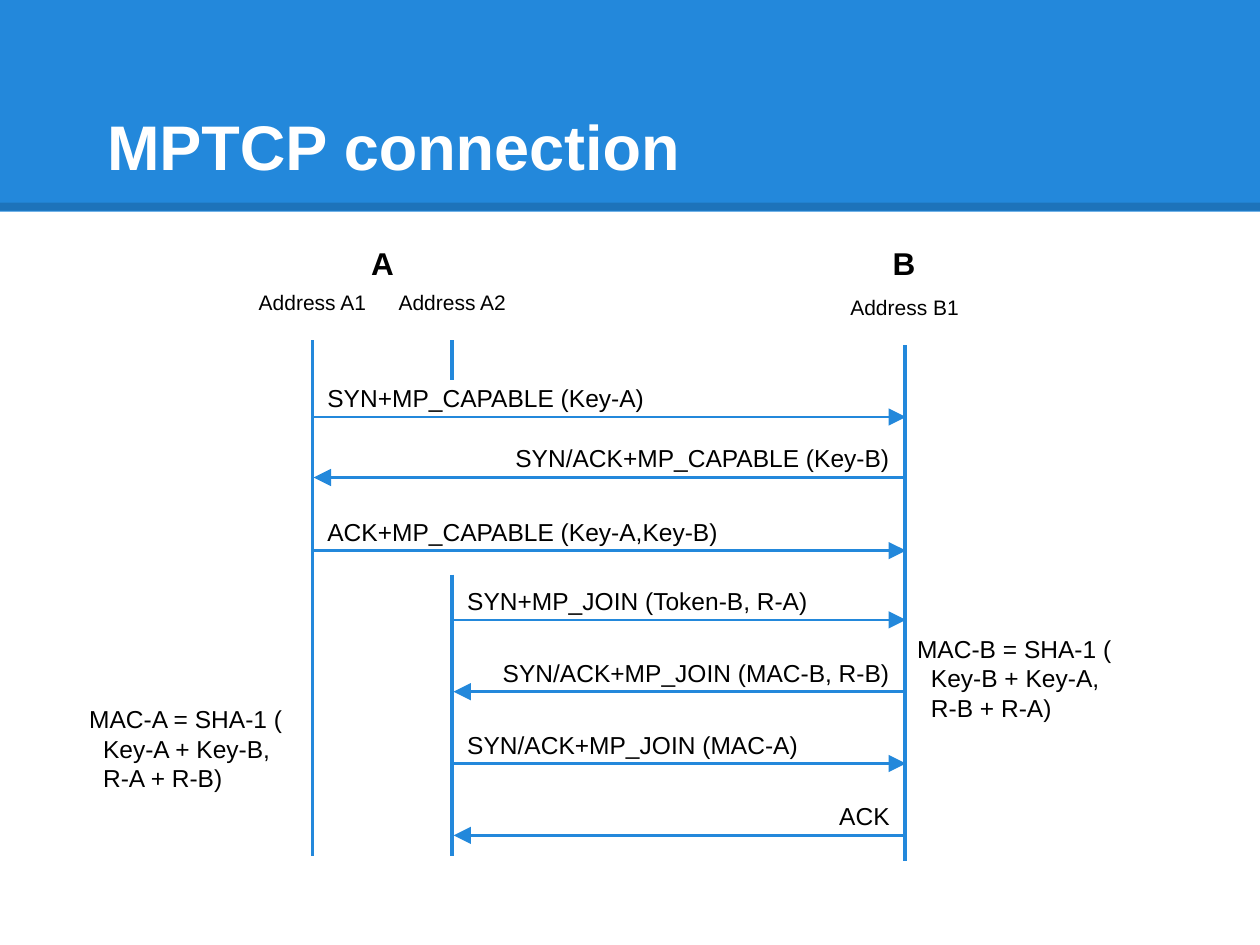
from lxml import etree
from pptx import Presentation
from pptx.dml.color import RGBColor
from pptx.enum.shapes import MSO_CONNECTOR, MSO_SHAPE
from pptx.enum.text import MSO_ANCHOR, PP_ALIGN
from pptx.oxml.ns import qn
from pptx.util import Inches, Pt

LEFT, CENTER, RIGHT = PP_ALIGN.LEFT, PP_ALIGN.CENTER, PP_ALIGN.RIGHT
TOP, MIDDLE, BOTTOM = MSO_ANCHOR.TOP, MSO_ANCHOR.MIDDLE, MSO_ANCHOR.BOTTOM
BLUE, BLACK, WHITE = "2388DB", "000000", "FFFFFF"

TITLE = "MPTCP connection"
X = {"A1": 2.48, "A2": 3.59, "B1": 7.18}
# host, left, width
HOSTS = [("A", 2.48, 1.11), ("B", 6.53, 1.29)]
# address, top of its label
ADDRESSES = [("A1", 2.2), ("A2", 2.2), ("B1", 2.24)]
# address, top, bottom
LIFELINES = [("A1", 2.7, 6.79), ("A2", 2.7, 3.02), ("A2", 4.56, 6.79), ("B1", 2.74, 6.83)]
# sender, receiver, y of arrow, text
MESSAGES = [
    ("A1", "B1", 3.31, "SYN+MP_CAPABLE (Key-A)"),
    ("B1", "A1", 3.79, "SYN/ACK+MP_CAPABLE (Key-B)"),
    ("A1", "B1", 4.37, "ACK+MP_CAPABLE (Key-A,Key-B)"),
    ("A2", "B1", 4.92, "SYN+MP_JOIN (Token-B, R-A)"),
    ("B1", "A2", 5.49, "SYN/ACK+MP_JOIN (MAC-B, R-B)"),
    ("A2", "B1", 6.06, "SYN/ACK+MP_JOIN (MAC-A)"),
    ("B1", "A2", 6.63, "ACK"),
]
# left, top, width, height, lines
FORMULAS = [
    (7.18, 4.93, 1.81, 0.88, ["MAC-B = SHA-1 (", "Key-B + Key-A,", "R-B + R-A)"]),
    (0.61, 5.49, 1.88, 0.87, ["MAC-A = SHA-1 (", "Key-A + Key-B,", "R-A + R-B)"]),
]


def rgb(color):
    return RGBColor.from_string(color)


def add_text(s, box, lines, size=14, align=LEFT, anchor=TOP, color=BLACK, bold=False):
    """Add a text box; lines after the first are indented by two spaces' width."""
    tf = s.shapes.add_textbox(*map(Inches, box)).text_frame
    tf.word_wrap = True
    tf.vertical_anchor = anchor
    for side in ("left", "top", "right", "bottom"):
        setattr(tf, f"margin_{side}", Inches(0.1))
    font = {"name": "Arial", "size": Pt(size), "bold": bold}
    for i, line in enumerate(lines):
        p = tf.add_paragraph() if i else tf.paragraphs[0]
        p.alignment = align
        if i:
            p._p.get_or_add_pPr().set("marL", str(Inches(0.11)))
        r = p.add_run()
        r.text = line
        for key, value in font.items():
            setattr(r.font, key, value)
        r.font.color.rgb = rgb(color)
    return tf


def add_line(s, start, end, width, color=BLUE, arrow=False, alpha=None):
    line = s.shapes.add_connector(MSO_CONNECTOR.STRAIGHT, *map(Inches, start + end))
    line.line.width = Pt(width)
    line.line.color.rgb = rgb(color)
    sp_pr = line._element.spPr
    ln = sp_pr.find(qn("a:ln"))
    if alpha is not None:
        clr = ln.find(".//" + qn("a:srgbClr"))
        etree.SubElement(clr, qn("a:alpha"), val=str(alpha * 1000))
    if arrow:
        etree.SubElement(ln, qn("a:tailEnd"), type="triangle", w="lg", len="lg")
    etree.SubElement(sp_pr, qn("a:effectLst"))


def add_header(s):
    band = s.shapes.add_shape(MSO_SHAPE.RECTANGLE, 0, 0, Inches(10), Inches(1.68))
    band.shadow.inherit = False
    band.fill.solid()
    band.fill.fore_color.rgb = rgb(BLUE)
    band.line.fill.background()
    add_line(s, (0, 1.64), (10, 1.64), 4.5, BLACK, alpha=15)
    tf = add_text(s, (0.5, 0.3, 9, 1.25), [TITLE], 36, LEFT, BOTTOM, WHITE, True)
    tf.margin_left = Inches(0.35)


def add_message(s, sender, receiver, y, text):
    add_line(s, (X[sender], y), (X[receiver] + 0.01, y), 1.5, arrow=True)
    rightward = X[sender] < X[receiver]
    width = 4 if "A1" in (sender, receiver) else 3.4
    left = X[sender] + 0.02 if rightward else X[sender] - 0.02 - width
    add_text(s, (left, y - 0.37, width, 0.37), [text], align=LEFT if rightward else RIGHT)


def main():
    prs = Presentation()
    prs.slide_width, prs.slide_height = Inches(10), Inches(7.5)
    s = prs.slides.add_slide(prs.slide_layouts[6])
    add_header(s)
    for name, left, width in HOSTS:
        add_text(s, (left, 1.84, width, 0.5), [name], 18, CENTER, MIDDLE, bold=True)
    for name, top in ADDRESSES:
        add_text(s, (X[name] - 0.83, top, 1.66, 0.5), [f"Address {name}"], 12, CENTER)
    for name, top, bottom in LIFELINES:
        add_line(s, (X[name], top), (X[name], bottom), 2.25)
    for message in MESSAGES:
        add_message(s, *message)
    for *box, lines in FORMULAS:
        add_text(s, box, lines)
    prs.save("out.pptx")


if __name__ == "__main__":
    main()
